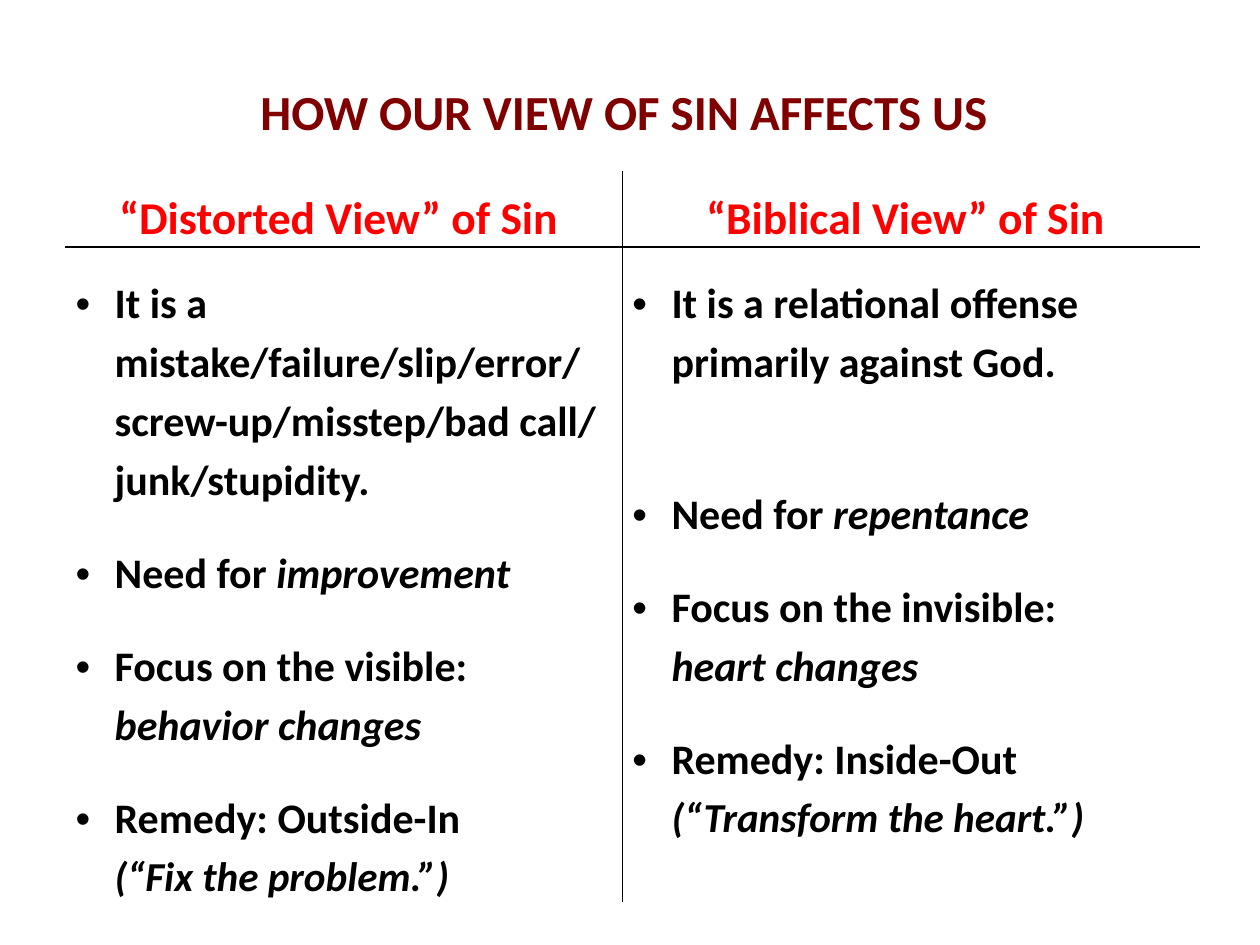
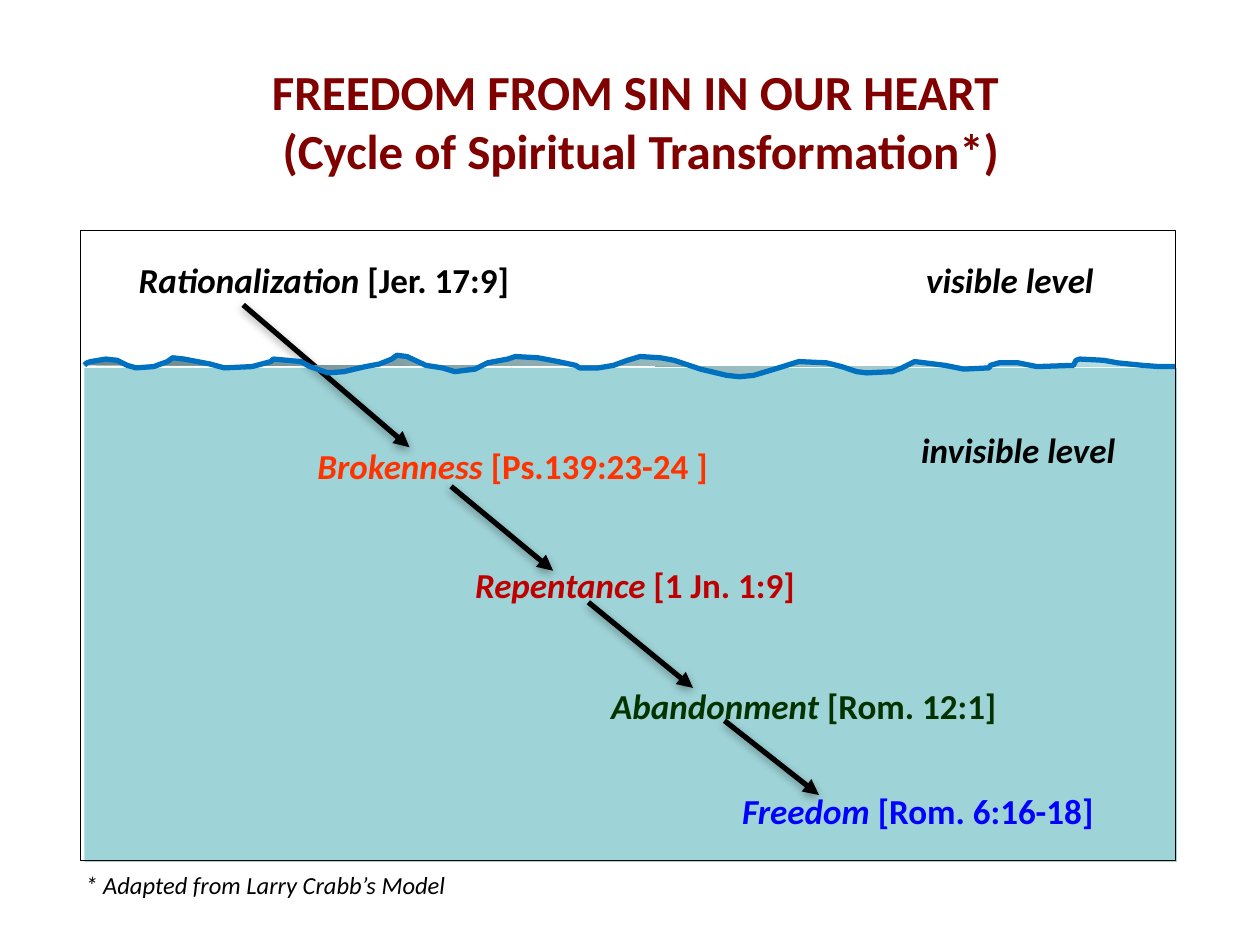
from dataclasses import dataclass

from lxml import etree
from pptx import Presentation
from pptx.dml.color import RGBColor
from pptx.enum.shapes import MSO_CONNECTOR, MSO_SHAPE
from pptx.enum.text import MSO_ANCHOR, PP_ALIGN
from pptx.oxml.ns import qn
from pptx.util import Pt

PX = 9144
LINE, RECT = MSO_CONNECTOR.STRAIGHT, MSO_SHAPE.RECTANGLE
TOP, MID, LOW = MSO_ANCHOR.TOP, MSO_ANCHOR.MIDDLE, MSO_ANCHOR.BOTTOM
LEFT, CENTER = PP_ALIGN.LEFT, PP_ALIGN.CENTER


@dataclass(frozen=True)
class Theme:
    font: str = "Calibri"
    title: str = "800000"
    head: str = "FF0000"
    ink: str = "000000"
    water: str = "9ED3D7"
    wave: str = "0070C0"
    dark: str = "6D8688"
    light: str = "B8E3E6"
    title_size: float = 28
    head_size: float = 26
    list_size: float = 24
    quote_size: float = 23.5
    step_size: float = 20
    note_size: float = 14
    lead: float = 1.15
    gap: float = 19.6
    wide_gap: float = 53.2


T = Theme()

VIEWS = {
    "title": "HOW OUR VIEW OF SIN AFFECTS US ",
    "box": (33, 42, 933, 92),
    "heads": ["“Distorted View” of Sin ", "“Biblical View” of Sin "],
    "lists": [
        [
            (0, "It is a mistake/failure/slip/error/ screw-up/misstep/bad call/ junk/stupidity.", ""),
            (T.gap, "Need for ", "improvement"),
            (T.gap, "Focus on the visible: \v", "behavior changes"),
            (T.gap, "Remedy: Outside-In \v", "(“Fix the problem.”)"),
        ],
        [
            (0, "It is a relational offense primarily against God.", ""),
            (T.wide_gap, "Need for ", "repentance"),
            (T.gap, "Focus on the invisible: \v", "heart changes"),
            (T.gap, "Remedy: Inside-Out\v", "(“Transform the heart.”)"),
        ],
    ],
    "cols": [442, 458],
    "rows": [60, 465],
}

CYCLE = {
    "title": "FREEDOM FROM SIN IN OUR HEART \v(Cycle of Spiritual Transformation*)",
    "box": (50, 33, 917, 125),
    "steps": [
        ("Rationalization ", "[Jer. 17:9]", T.ink, (50, 200, 558, 46)),
        ("Brokenness ", "[Ps.139:23-24 ]", "FF3300", (192, 348, 500, 46)),
        ("Repentance ", "[1 Jn. 1:9]", "C00000", (317, 442, 542, 46)),
        ("Abandonment ", "[Rom. 12:1]", "003300", (425, 538, 492, 46)),
        ("Freedom ", "[Rom. 6:16-18]", "0000FF", (529, 622, 413, 46)),
    ],
    "levels": [
        ("visible level", "", T.ink, (675, 200, 225, 54)),
        ("invisible level", "", T.ink, (671, 335, 245, 81)),
    ],
    "arrows": [
        (193, 242, 325, 355), (358, 386, 439, 453),
        (467, 478, 550, 546), (575, 572, 650, 631),
    ],
    "water": (67, 292, 867, 392),
    "frame": (64, 183, 869, 500),
    "note": ("* Adapted from Larry Crabb’s Model", (58, 683, 367, 38)),
}

WAVE = [
    (67, 290), (69, 288), (72, 287), (84, 285), (93, 286), (101, 290), (108, 292),
    (122, 291), (133, 287), (137, 284), (146, 285), (167, 289), (178, 292), (200, 291),
    (215, 287), (217, 285), (239, 287), (246, 291), (252, 293), (260, 296), (273, 295),
    (290, 291), (301, 289), (311, 285), (315, 282), (323, 283), (338, 290), (351, 292),
    (361, 295), (377, 293), (387, 288), (403, 285), (409, 283), (427, 284), (443, 287),
    (457, 290), (460, 292), (475, 292), (487, 290), (498, 286), (508, 283), (524, 284),
    (535, 286), (556, 293), (577, 298), (587, 299), (598, 298), (608, 295), (618, 292),
    (634, 287), (656, 288), (668, 291), (680, 295), (688, 296), (708, 295), (716, 292),
    (726, 287), (750, 290), (765, 293), (785, 292), (786, 290), (793, 288), (808, 288),
    (823, 291), (852, 290), (854, 286), (857, 285), (876, 286), (887, 288), (907, 290),
    (920, 291), (933, 291),
]


def emu(vals):
    return [round(v * PX) for v in vals]


def rgb(code):
    return RGBColor.from_string(code)


def node(base, tag, **attrs):
    item = etree.SubElement(base, qn(tag))
    for key, val in attrs.items():
        item.set(key, str(val))
    return item


def style(run, size, color, bold=True, slant=False):
    font = run.font
    font.name, font.size, font.bold, font.italic = T.font, Pt(size), bold, slant
    font.color.rgb = rgb(color)


def start(deck, data):
    slide = deck.slides.add_slide(deck.slide_layouts[5])
    head = slide.shapes.title
    head.left, head.top, head.width, head.height = emu(data["box"])
    head.text_frame.text = data["title"]
    head.text_frame.vertical_anchor = MID
    para = head.text_frame.paragraphs[0]
    para.alignment = CENTER
    for run in para.runs:
        style(run, T.title_size, T.title)
    return slide


def border(cell, sides):
    props = cell._tc.get_or_add_tcPr()
    for side in sides:
        line = node(props, "a:ln" + side, w=Pt(1))
        fill = node(line, "a:solidFill")
        node(fill, "a:srgbClr", val=T.ink)


def bullet(para, gap, plain, slant):
    props = para._p.get_or_add_pPr()
    props.set("marL", str(31 * PX))
    props.set("indent", str(-31 * PX))
    para.alignment, para.line_spacing = LEFT, T.lead
    para.space_before = Pt(gap)
    node(props, "a:buFont", typeface="Arial")
    node(props, "a:buChar", char="•")
    para.text = plain
    style(para.runs[0], T.list_size, T.ink)
    if slant:
        run = para.add_run()
        run.text = slant
        size = T.quote_size if slant.startswith("(") else T.list_size
        style(run, size, T.ink, slant=True)


def views(deck):
    slide = start(deck, VIEWS)
    cols, rows = VIEWS["cols"], VIEWS["rows"]
    area = emu((52, 136, sum(cols), sum(rows)))
    table = slide.shapes.add_table(2, 2, *area).table
    table.first_row = table.horz_banding = False
    for row, high in zip(table.rows, rows):
        row.height = high * PX
    for n, wide in enumerate(cols):
        table.columns[n].width = wide * PX
        head, body = table.cell(0, n), table.cell(1, n)
        inner = "L" if n else "R"
        for cell, sides in ((head, inner + "B"), (body, inner + "T")):
            border(cell, sides)
            cell.fill.background()
            cell.margin_left = cell.margin_right = 8 * PX
            cell.margin_top = cell.margin_bottom = 0
        head.vertical_anchor, body.vertical_anchor = LOW, TOP
        body.margin_top = 19 * PX
        head.text_frame.text = VIEWS["heads"][n]
        para = head.text_frame.paragraphs[0]
        para.alignment, para.line_spacing = CENTER, T.lead
        style(para.runs[0], T.head_size, T.head)
        frame = body.text_frame
        for k, item in enumerate(VIEWS["lists"][n]):
            bullet(frame.add_paragraph() if k else frame.paragraphs[0], *item)


def label(slide, name, verse, color, area):
    frame = slide.shapes.add_textbox(*emu(area)).text_frame
    frame.word_wrap = True
    frame.margin_left = 60 * PX
    frame.text = name
    para = frame.paragraphs[0]
    style(para.runs[0], T.step_size, color, slant=True)
    if verse:
        run = para.add_run()
        run.text = verse
        style(run, T.step_size, color)


def arrow(slide, ends):
    link = slide.shapes.add_connector(LINE, *emu(ends))
    link.line.width = Pt(3)
    link.line.color.rgb = rgb(T.ink)
    props = link._element.spPr
    node(props.find(qn("a:ln")), "a:tailEnd", type="triangle")
    glow = node(node(props, "a:effectLst"), "a:outerShdw", blurRad=Pt(5),
                dist=Pt(1.8), dir=5400000, rotWithShape=0)
    node(node(glow, "a:srgbClr", val=T.ink), "a:alpha", val=35000)


def wave(slide):
    path = slide.shapes.build_freeform(*WAVE[0], scale=PX)
    path.add_line_segments(WAVE[1:], close=False)
    shape = path.convert_to_shape()
    shape.shadow.inherit = False
    shape.fill.gradient()
    shape.fill.gradient_angle = 45
    for stop, color in zip(shape.fill.gradient_stops, (T.dark, T.light)):
        stop.color.rgb = rgb(color)
    shape.line.color.rgb = rgb(T.wave)
    shape.line.width = Pt(3)


def cycle(deck):
    slide = start(deck, CYCLE)
    water = slide.shapes.add_shape(RECT, *emu(CYCLE["water"]))
    water.shadow.inherit = False
    water.fill.solid()
    water.fill.fore_color.rgb = rgb(T.water)
    water.line.fill.background()
    for ends in CYCLE["arrows"]:
        arrow(slide, ends)
    for step in CYCLE["steps"]:
        label(slide, *step)
    wave(slide)
    for level in CYCLE["levels"]:
        label(slide, *level)
    edge = slide.shapes.add_shape(RECT, *emu(CYCLE["frame"]))
    edge.shadow.inherit = False
    edge.fill.background()
    edge.line.color.rgb = rgb(T.ink)
    edge.line.width = Pt(0.75)
    text, area = CYCLE["note"]
    note = slide.shapes.add_textbox(*emu(area)).text_frame
    note.word_wrap, note.vertical_anchor = True, MID
    note.text = text
    style(note.paragraphs[0].runs[0], T.note_size, T.ink, bold=False, slant=True)


def main():
    deck = Presentation()
    deck.slide_width, deck.slide_height = emu((1000, 750))
    views(deck)
    cycle(deck)
    deck.save("out.pptx")


if __name__ == "__main__":
    main()
